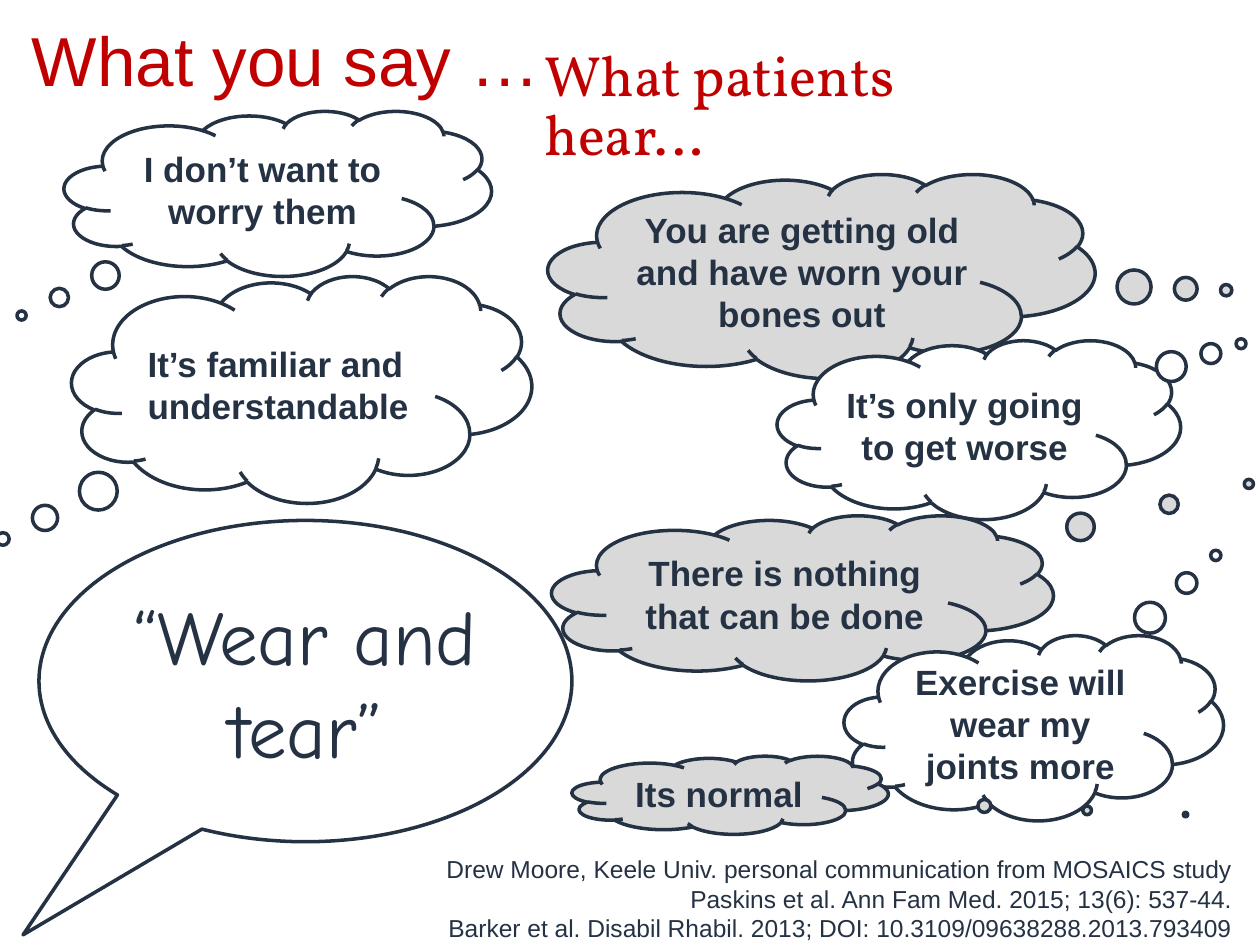
"""Build a slide that sets what is said beside what patients hear."""
from pptx import Presentation
from pptx.dml.color import RGBColor
from pptx.enum.shapes import MSO_SHAPE
from pptx.enum.text import MSO_ANCHOR, MSO_AUTO_SIZE, PP_ALIGN
from pptx.util import Inches, Pt

CLOUD, SPEECH = MSO_SHAPE.CLOUD_CALLOUT, MSO_SHAPE.OVAL_CALLOUT
LEFT, MID, RIGHT = PP_ALIGN.LEFT, PP_ALIGN.CENTER, PP_ALIGN.RIGHT
NAVY = RGBColor(0x25, 0x32, 0x44)
RED = RGBColor(0xC0, 0x00, 0x00)
WHITE = RGBColor(0xFF, 0xFF, 0xFF)
GREY = RGBColor(0xD9, 0xD9, 0xD9)

deck = Presentation()
deck.slide_width, deck.slide_height = Inches(10), Inches(7.5)
slide = deck.slides.add_slide(deck.slide_layouts[5])
shapes = slide.shapes


def share(x, y, w, h):
    """Turn percent shares of the slide into lengths."""
    wide, high = deck.slide_width / 100, deck.slide_height / 100
    return int(x * wide), int(y * high), int(w * wide), int(h * high)


def write(shape, lines, size, face, color, align=MID, bold=False, anchor=MSO_ANCHOR.MIDDLE):
    """Fill a shape with one paragraph per line."""
    frame = shape.text_frame
    frame.word_wrap = True
    frame.auto_size = MSO_AUTO_SIZE.NONE
    frame.vertical_anchor = anchor
    for i, line in enumerate(lines):
        para = frame.add_paragraph() if i else frame.paragraphs[0]
        para.alignment = align
        run = para.add_run()
        run.text = line
        font = run.font
        font.size, font.name, font.bold = Pt(size), face, bold
        font.color.rgb = color


title = shapes.title
title.left, title.top, title.width, title.height = share(42.2, 6.27, 37.7, 10.4)
write(title, ["What patients hear…"], 32.4, "Vollkorn", RED, LEFT)
title.text_frame.paragraphs[0].line_spacing = 0.86

cites = [
    "Drew Moore, Keele Univ. personal communication from MOSAICS study",
    "Paskins et al. Ann Fam Med. 2015; 13(6): 537-44.",
    "Barker et al. Disabil Rhabil. 2013; DOI: 10.3109/09638288.2013.793409",
]
foot = shapes.add_textbox(*share(22.4, 89.73, 76.4, 10.8))
write(foot, cites, 14, "Arial", NAVY, RIGHT, anchor=MSO_ANCHOR.TOP)

head = shapes.add_textbox(*share(0, -1.07, 45.4, 14.67))
write(head, ["What you say …"], 39.6, "Arial", RED)

bubbles = [
    (SPEECH, (3.1, 55.07, 42.3, 34), (-0.53, 0.79), WHITE, MID, "“Wear and tear”"),
    (CLOUD, (5.1, 11.73, 33.9, 17.47), (-0.6, 0.74), WHITE, MID, "I don’t want to worry them"),
    (CLOUD, (5.7, 29.2, 36.5, 24), (-0.65, 0.66), WHITE, LEFT, "It’s familiar and understandable"),
    (CLOUD, (43.5, 18.4, 43.4, 21.6), (0.74, 0.07), GREY, MID,
     "You are getting old and have worn your bones out"),
    (CLOUD, (61.7, 36, 32, 18.93), (0.65, -0.48), WHITE, MID, "It’s only going to get worse"),
    (CLOUD, (43.8, 54.53, 39.8, 17.47), (0.89, -0.69), GREY, MID, "There is nothing that can be done"),
    (CLOUD, (67, 67.2, 30.1, 19.6), (0.48, -0.93), WHITE, MID, "Exercise will wear my joints more"),
    (CLOUD, (45.4, 80, 25.1, 8.27), (1.44, 0.25), GREY, MID, "Its normal"),
]
for kind, area, tail, fill, align, words in bubbles:
    bubble = shapes.add_shape(kind, *share(*area))
    bubble.shadow.inherit = False
    bubble.adjustments[0], bubble.adjustments[1] = tail
    bubble.fill.solid()
    bubble.fill.fore_color.rgb = fill
    bubble.line.color.rgb = NAVY
    bubble.line.width = Pt(2)
    if kind == SPEECH:
        write(bubble, [words], 44, "Comic Neue", NAVY, align)
    else:
        write(bubble, [words], 20, "Arial", NAVY, align, bold=True)

deck.save("out.pptx")
